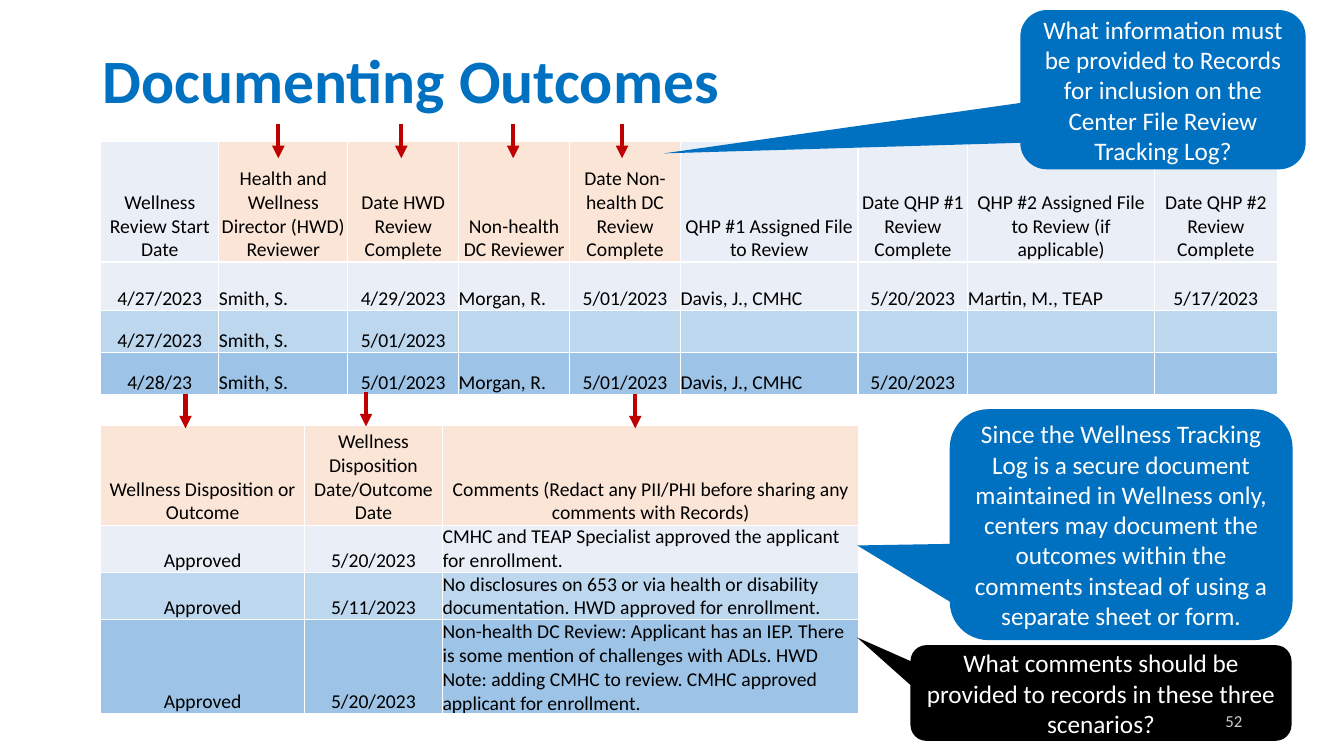
import pptx
import pptx.dml.color
import pptx.enum.shapes
import pptx.enum.text
import pptx.oxml
import pptx.oxml.ns
import pptx.util
from dataclasses import dataclass
from lxml import etree

ALIGN = pptx.enum.text.PP_ALIGN
ANCHOR = pptx.enum.text.MSO_ANCHOR
PX = 9144  # 100 px to the inch


@dataclass(frozen=True)
class Theme:
    font: str = "Calibri"
    blue: str = "0070C0"
    red: str = "C00000"
    black: str = "000000"
    white: str = "FFFFFF"
    peach: str = "FBE5D6"
    rows: tuple = ("EAEFF7", "BDD7EE", "9DC3E6")
    title_size: int = 44
    callout_size: int = 18
    table_size: int = 14
    number_size: int = 12
    arrow_width: int = 3


THEME = Theme()
SLIDE_SIZE = (1333, 750)
TITLE = ("Documenting Outcomes", (92, 10, 1150, 145))
PAGE_NUMBER = ("52", (942, 695, 300, 40))

TRACKING_LOG = {
    "at": (100, 140),
    "columns": (117, 128, 110, 110, 110, 176, 109, 185, 122),
    "heights": (120, 48, 42, 42),
    "left_aligned": (1, 3, 5, 7),
    "to_records": (1, 2, 3, 4),
    "text": [
        ["Wellness Review Start Date", "Health and Wellness Director (HWD) Reviewer",
         "Date HWD Review Complete", "Non-health DC Reviewer",
         "Date Non-health DC Review Complete", "QHP #1 Assigned File to Review",
         "Date QHP #1 Review Complete", "QHP #2 Assigned File to Review (if applicable)",
         "Date QHP #2 Review Complete"],
        ["4/27/2023", "Smith, S.", "4/29/2023", "Morgan, R.", "5/01/2023",
         "Davis, J., CMHC", "5/20/2023", "Martin, M., TEAP", "5/17/2023"],
        ["4/27/2023", "Smith, S.", "5/01/2023", "", "", "", "", "", ""],
        ["4/28/23", "Smith, S.", "5/01/2023", "Morgan, R.", "5/01/2023",
         "Davis, J., CMHC", "5/20/2023", "", ""],
    ],
}
DISPOSITIONS = {
    "at": (100, 422),
    "columns": (202, 137, 413),
    "heights": (99, 47, 47, 93),
    "left_aligned": (2,),
    "to_records": (0, 1, 2),
    "text": [
        ["Wellness Disposition or Outcome", "Wellness Disposition Date/Outcome Date",
         "Comments (Redact any PII/PHI before sharing any comments with Records)"],
        ["Approved", "5/20/2023",
         "CMHC and TEAP Specialist approved the applicant for enrollment."],
        ["Approved", "5/11/2023",
         "No disclosures on 653 or via health or disability documentation. "
         "HWD approved for enrollment."],
        ["Approved", "5/20/2023",
         "Non-health DC Review: Applicant has an IEP. There is some mention of challenges "
         "with ADLs. HWD Note: adding CMHC to review. CMHC approved applicant for enrollment."],
    ],
}
# text, box, pointer tip as a share of the box, fill
CALLOUTS = [
    ("Since the Wellness Tracking Log is a secure document maintained in Wellness only, "
     "centers may document the outcomes within the comments instead of using a separate "
     "sheet or form.", (942, 406, 340, 229), (-0.77, 0.09), THEME.blue),
    ("What information must be provided to Records for inclusion on the Center File Review "
     "Tracking Log?", (1012, 10, 283, 158), (-1.75, 0.4), THEME.blue),
    ("What comments should be provided to records in these three scenarios?",
     (903, 640, 378, 95), (-0.64, -0.58), THEME.black),
]
ARROW_LENGTH = 34
ARROW_STARTS = [(276, 123), (398, 123), (509, 123), (617, 123),
                (184, 391), (363, 389), (630, 391)]


def emu(lengths):
    return [length * PX for length in lengths]


def rgb(color):
    return pptx.dml.color.RGBColor.from_string(color)


def set_all(target, values):
    for name, value in values.items():
        setattr(target, name, value)


def write(frame, text, size, color, align, bold=False):
    frame.word_wrap = True
    paragraph = frame.paragraphs[0]
    paragraph.alignment = align
    run = paragraph.add_run()
    run.text = text
    set_all(run.font, {"name": THEME.font, "size": pptx.util.Pt(size), "bold": bold})
    run.font.color.rgb = rgb(color)
    return paragraph


def add_text(slide, text, box, size, color, align, bold=False):
    frame = slide.shapes.add_textbox(*emu(box)).text_frame
    frame.vertical_anchor = ANCHOR.MIDDLE
    return write(frame, text, size, color, align, bold)


def add_borders(cell):
    properties = cell._tc.get_or_add_tcPr()
    for side in ("lnL", "lnR", "lnT", "lnB"):
        properties.append(pptx.oxml.parse_xml(
            f'<a:{side} {pptx.oxml.ns.nsdecls("a")} w="12700"><a:solidFill>'
            f'<a:srgbClr val="{THEME.white}"/></a:solidFill></a:{side}>'))


def add_log(slide, log):
    columns, heights = log["columns"], log["heights"]
    box = (*log["at"], sum(columns), sum(heights))
    table = slide.shapes.add_table(len(heights), len(columns), *emu(box)).table
    set_all(table, {"first_row": False, "horz_banding": False})
    for column, width in zip(table.columns, emu(columns)):
        column.width = width
    for row, height in zip(table.rows, emu(heights)):
        row.height = height
    for r, texts in enumerate(log["text"]):
        for c, text in enumerate(texts):
            cell = table.cell(r, c)
            set_all(cell, {"margin_left": 0, "margin_right": 0, "margin_top": 0,
                           "margin_bottom": 0, "vertical_anchor": ANCHOR.BOTTOM})
            add_borders(cell)
            cell.fill.solid()
            highlighted = r == 0 and c in log["to_records"]
            fill = THEME.peach if highlighted else THEME.rows[max(r - 1, 0)]
            cell.fill.fore_color.rgb = rgb(fill)
            if text:
                names = r > 0 and c in log["left_aligned"]
                write(cell.text_frame, text, THEME.table_size, THEME.black,
                      ALIGN.LEFT if names else ALIGN.CENTER)


def add_callout(slide, text, box, tip, fill):
    kind = pptx.enum.shapes.MSO_SHAPE.ROUNDED_RECTANGULAR_CALLOUT
    callout = slide.shapes.add_shape(kind, *emu(box))
    callout.shadow.inherit = False
    callout.fill.solid()
    callout.fill.fore_color.rgb = rgb(fill)
    callout.line.fill.background()
    callout.adjustments[0], callout.adjustments[1] = tip
    callout.text_frame.vertical_anchor = ANCHOR.MIDDLE
    write(callout.text_frame, text, THEME.callout_size, THEME.white, ALIGN.CENTER)


def add_arrow(slide, x, y):
    arrow = slide.shapes.add_connector(
        pptx.enum.shapes.MSO_CONNECTOR.STRAIGHT, *emu((x, y, x, y + ARROW_LENGTH)))
    arrow.line.color.rgb = rgb(THEME.red)
    arrow.line.width = pptx.util.Pt(THEME.arrow_width)
    qn = pptx.oxml.ns.qn
    etree.SubElement(arrow.line._get_or_add_ln(), qn("a:tailEnd"), type="triangle")
    etree.SubElement(arrow._element.spPr, qn("a:effectLst"))


def main():
    deck = pptx.Presentation()
    deck.slide_width, deck.slide_height = emu(SLIDE_SIZE)
    slide = deck.slides.add_slide(deck.slide_layouts[6])

    title = add_text(slide, *TITLE, THEME.title_size, THEME.blue, ALIGN.LEFT, bold=True)
    title.line_spacing = 0.9
    for log in (TRACKING_LOG, DISPOSITIONS):
        add_log(slide, log)
    for callout in CALLOUTS:
        add_callout(slide, *callout)
    for start in ARROW_STARTS:
        add_arrow(slide, *start)

    number = add_text(slide, *PAGE_NUMBER, THEME.number_size, THEME.white, ALIGN.RIGHT)
    number.space_after = pptx.util.Pt(6)
    qn = pptx.oxml.ns.qn
    for color in number._p.iter(qn("a:srgbClr")):
        etree.SubElement(color, qn("a:alpha"), val="80000")
    deck.save("out.pptx")


if __name__ == "__main__":
    main()
